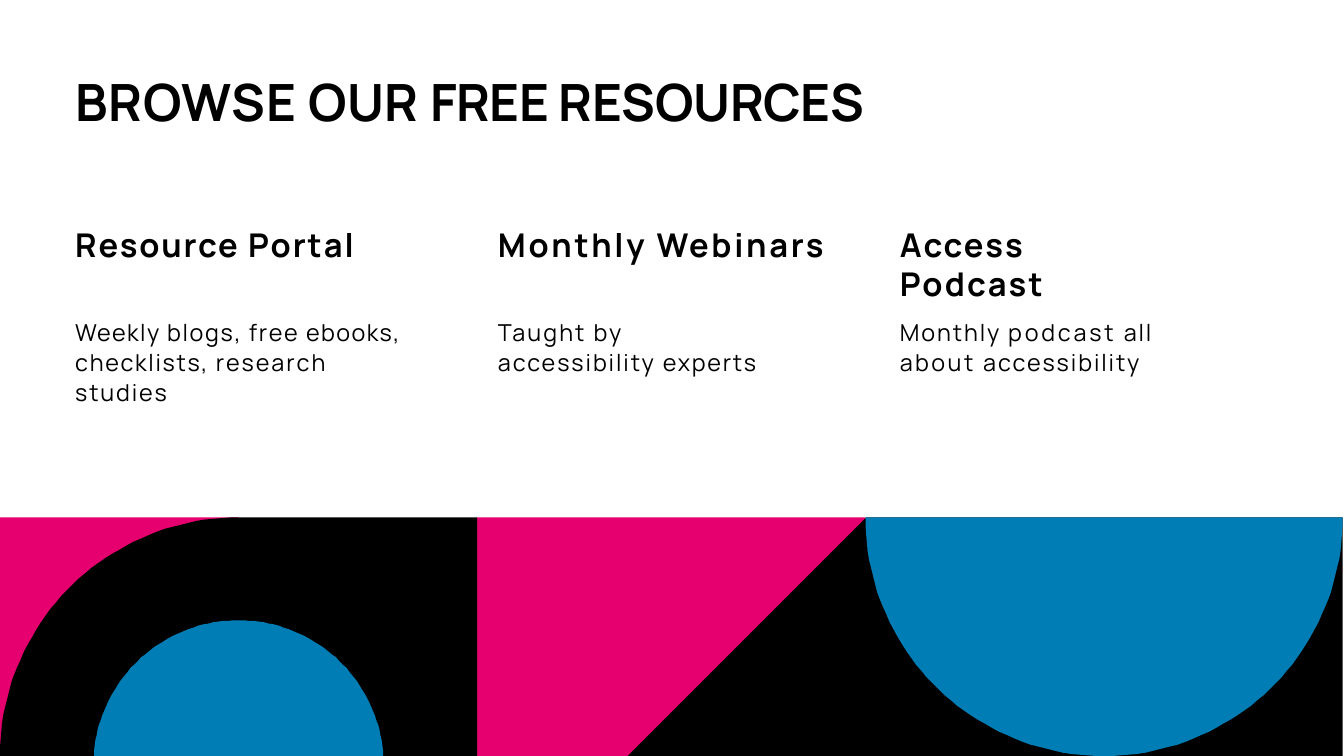
from math import cos, radians, sin

from pptx import Presentation
from pptx.dml.color import RGBColor
from pptx.enum.shapes import MSO_SHAPE
from pptx.enum.text import MSO_ANCHOR, MSO_AUTO_SIZE, PP_ALIGN
from pptx.util import Pt

PX = 9144  # EMU in one px, 100 px to the inch
WIDTH, HEIGHT = 2000, 1125
RADIUS = 355
BAND_TOP = HEIGHT - RADIUS
COLORS = {"black": "000000", "pink": "E6006F", "blue": "007DB4"}
FONT = "Manrope"

# Each word carries its letter spacing in points
TITLE = [("BROWSE ", 1.1), ("OUR ", 0.6), ("FREE ", -0.7), ("RESOURCES", -0.1)]
# Left edge, heading width, heading, body width, body height, body
COLUMNS = [
    (111, 423, [("Resource ", 1.9), ("Portal", 2.1)],
     511, 137, [("Weekly ", 1.6), ("blogs, ", 1.8), ("free ", 1.9), ("ebooks, ", 1.6),
                ("checklists, ", 1.8), ("research ", 2.2), ("studies", 2)]),
    (740, 510, [("Monthly Webinars", 2.9)],
     429, 92, [("Taught ", 2.3), ("by ", 2.5), ("accessibility ", 2.1), ("experts", 1.9)]),
    (1338, 386, [("Access ", 2), ("Podcast", 2.3)],
     488, 92, [("Monthly ", 2.1), ("podcast ", 3), ("all ", 1.9), ("about ", 2.7),
               ("accessibility", 2.1)]),
]


def paint(shape, color):
    shape.fill.solid()
    shape.fill.fore_color.rgb = RGBColor.from_string(COLORS[color])
    shape.line.fill.background()
    shape.shadow.inherit = False


def add_block(page, left, width, color):
    block = page.shapes.add_shape(
        MSO_SHAPE.RECTANGLE, left * PX, BAND_TOP * PX, width * PX, RADIUS * PX)
    paint(block, color)


def add_outline(page, points, color):
    builder = page.shapes.build_freeform(*points[0], scale=PX)
    builder.add_line_segments(points[1:], close=True)
    paint(builder.convert_to_shape(), color)


def arc_points(center_x, center_y, radius, start, end):
    """Points along an arc; degrees run clockwise from the right."""
    return [(round(center_x + radius * cos(radians(angle)), 2),
             round(center_y + radius * sin(radians(angle)), 2))
            for angle in range(start, end + 1, 2)]


def add_text(page, left, top, width, height, words, *, size, bold=False,
             line_spacing=1.0, inset_top=1):
    box = page.shapes.add_textbox(left * PX, top * PX, width * PX, height * PX)
    frame = box.text_frame
    frame.word_wrap = True
    frame.auto_size = MSO_AUTO_SIZE.SHAPE_TO_FIT_TEXT
    frame.vertical_anchor = MSO_ANCHOR.TOP
    frame.margin_left, frame.margin_top = PX, inset_top * PX
    frame.margin_right = frame.margin_bottom = 0
    para = frame.paragraphs[0]
    para.alignment = PP_ALIGN.LEFT
    para.line_spacing = line_spacing
    para.space_before = Pt(1)
    for word, spacing in words:
        span = para.add_run()
        span.text = word
        span.font.name = FONT
        span.font.size = Pt(size)
        span.font.bold = bold
        span.font.color.rgb = RGBColor.from_string(COLORS["black"])
        span.font._element.set("spc", str(round(spacing * 100)))


def add_band(page):
    # Background blocks
    add_block(page, 1288, 2 * RADIUS, "black")
    add_block(page, 2 * RADIUS, 577, "pink")

    # Corner triangles
    add_outline(page, [(0, BAND_TOP), (RADIUS, BAND_TOP), (0, HEIGHT)], "pink")
    add_outline(page, [(934, HEIGHT), (1289, BAND_TOP), (1289, HEIGHT)], "black")

    # Hanging half disc
    add_outline(page, arc_points(1643, BAND_TOP, RADIUS, 0, 180), "blue")

    # Rounded block with a disc rising inside it
    corner = arc_points(RADIUS, HEIGHT, RADIUS, 180, 270)
    add_outline(page, corner + [(2 * RADIUS, BAND_TOP), (2 * RADIUS, HEIGHT)], "black")
    disc = arc_points(RADIUS, 1139, 216, 184, 356)
    add_outline(page, [(140, HEIGHT)] + disc[1:-1] + [(570, HEIGHT)], "blue")


def main():
    deck = Presentation()
    deck.slide_width, deck.slide_height = WIDTH * PX, HEIGHT * PX
    page = deck.slides.add_slide(deck.slide_layouts[6])

    add_band(page)

    # Title and the three resource columns
    add_text(page, 111, 60, 1778, 137, TITLE, size=55, bold=True, inset_top=44)
    for left, head_width, heading, body_width, body_height, body in COLUMNS:
        add_text(page, left, 333, head_width, 119, heading, size=35, bold=True)
        add_text(page, left, 470, body_width, body_height, body, size=25,
                 line_spacing=1.07)

    deck.save("out.pptx")


if __name__ == "__main__":
    main()
